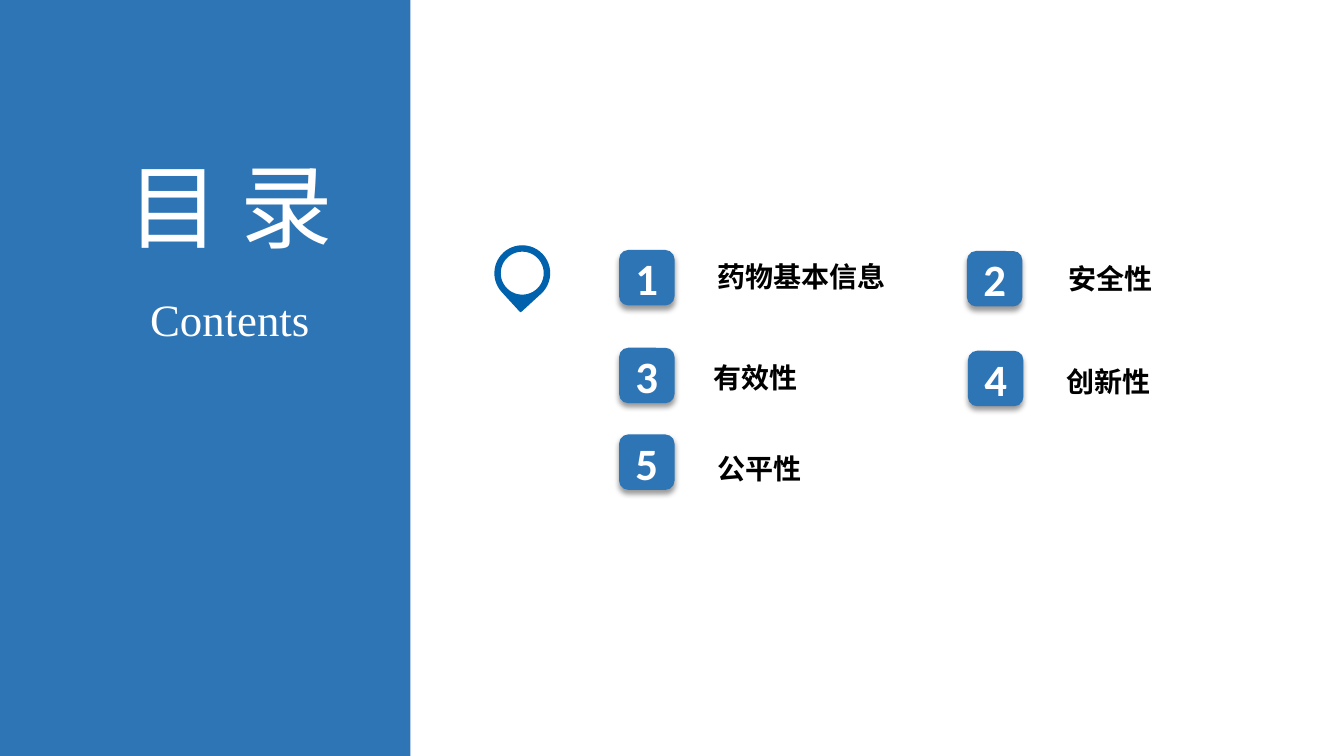
"""Build the contents slide: a blue title panel beside five numbered topics."""
import pptx
import pptx.dml.color
import pptx.enum.shapes
import pptx.enum.text
import pptx.oxml
import pptx.oxml.ns
import pptx.util

Inches = pptx.util.Inches
Pt = pptx.util.Pt
SHAPES = pptx.enum.shapes.MSO_SHAPE
ALIGN = pptx.enum.text.PP_ALIGN
ANCHOR = pptx.enum.text.MSO_ANCHOR
GROW = pptx.enum.text.MSO_AUTO_SIZE.SHAPE_TO_FIT_TEXT

BLUE, PIN_BLUE, WHITE, BLACK = "2E75B6", "0062AC", "FFFFFF", "000000"
HEADING = ("目 录", (1.02, 1.43, 2.52, 1.21))
SUBHEADING = ("Contents", (1.38, 2.84, 1.8, 0.64))
TOPICS = [
    ("药物基本信息", (6.14, 2.48), (7.02, 2.53), 2.21),
    ("安全性", (9.59, 2.49), (10.5, 2.55), 1.04),
    ("有效性", (6.14, 3.45), (6.98, 3.53), 1.04),
    ("创新性", (9.6, 3.48), (10.48, 3.57), 1.04),
    ("公平性", (6.14, 4.31), (7.02, 4.43), 1.04),
]
BADGE_SIZE, LABEL_HEIGHT = 0.55, 0.44
HEADING_FONT = {"size": Pt(66), "name": "Noto Sans CJK SC", "bold": False}
SUBHEADING_FONT = {"size": Pt(32), "name": "Times New Roman"}
BADGE_FONT = {"size": Pt(32), "name": "Calibri", "bold": True}
LABEL_FONT = {"size": Pt(20), "name": "Noto Sans CJK SC", "bold": True}
CENTRED = {"word_wrap": False, "auto_size": GROW, "vertical_anchor": ANCHOR.TOP}
BADGE_FRAME = {"word_wrap": True, "vertical_anchor": ANCHOR.MIDDLE}
LABEL_FRAME = {"word_wrap": True, "auto_size": GROW, "margin_right": 0}
SHADOW = (
    '<a:outerShdw %s blurRad="50800" dist="38100" dir="5400000" algn="t" rotWithShape="0">'
    '<a:srgbClr val="000000"><a:alpha val="40000"/></a:srgbClr></a:outerShdw>'
    % pptx.oxml.ns.nsdecls("a")
)


def rgb(value):
    return pptx.dml.color.RGBColor.from_string(value)


def apply(target, settings):
    for attribute, value in settings.items():
        setattr(target, attribute, value)


def write(shape, text, font, colour, frame, align):
    apply(shape.text_frame, frame)
    paragraph = shape.text_frame.paragraphs[0]
    apply(paragraph, {"alignment": align, "line_spacing": 1.0})
    run = paragraph.add_run()
    run.text = text
    apply(run.font, font)
    run.font.color.rgb = rgb(colour)
    east_asian = pptx.oxml.parse_xml(
        '<a:ea %s typeface="%s"/>' % (pptx.oxml.ns.nsdecls("a"), font["name"])
    )
    run.font._element.find(pptx.oxml.ns.qn("a:latin")).addnext(east_asian)


def add_box(slide, kind, box, fill, outline=None):
    shape = slide.shapes.add_shape(kind, *map(Inches, box))
    shape.shadow.inherit = False
    shape.fill.solid()
    shape.fill.fore_color.rgb = rgb(fill)
    if outline:
        shape.line.color.rgb = rgb(outline)
        shape.line.width = Pt(1)
    else:
        shape.line.fill.background()
    return shape


def add_topic(slide, number, label, badge_at, label_at, label_width):
    badge = add_box(slide, SHAPES.ROUNDED_RECTANGLE, (*badge_at, BADGE_SIZE, BADGE_SIZE), BLUE)
    effects = badge._element.spPr.find(pptx.oxml.ns.qn("a:effectLst"))
    effects.append(pptx.oxml.parse_xml(SHADOW))
    write(badge, str(number), BADGE_FONT, WHITE, BADGE_FRAME, ALIGN.CENTER)
    caption = slide.shapes.add_textbox(*map(Inches, (*label_at, label_width, LABEL_HEIGHT)))
    write(caption, label, LABEL_FONT, BLACK, LABEL_FRAME, ALIGN.LEFT)


def main():
    deck = pptx.Presentation()
    apply(deck, {"slide_width": Inches(13.33), "slide_height": Inches(7.5)})
    slide = deck.slides.add_slide(deck.slide_layouts[5])

    panel = add_box(slide, SHAPES.RECTANGLE, (0, 0, 4.07, 7.5), BLUE)
    heading = slide.shapes.title
    heading._element.addprevious(panel._element)
    text, box = HEADING
    apply(heading, dict(zip(("left", "top", "width", "height"), map(Inches, box))))
    write(heading, text, HEADING_FONT, WHITE, CENTRED, ALIGN.CENTER)

    text, box = SUBHEADING
    subheading = slide.shapes.add_textbox(*map(Inches, box))
    write(subheading, text, SUBHEADING_FONT, WHITE, CENTRED, ALIGN.CENTER)

    pin = add_box(slide, SHAPES.TEAR, (4.91, 2.44, 0.54, 0.54), PIN_BLUE, PIN_BLUE)
    pin.rotation = 137.5
    add_box(slide, SHAPES.OVAL, (4.96, 2.49, 0.44, 0.44), WHITE, PIN_BLUE)

    for number, topic in enumerate(TOPICS, 1):
        add_topic(slide, number, *topic)
    deck.save("out.pptx")


if __name__ == "__main__":
    main()
